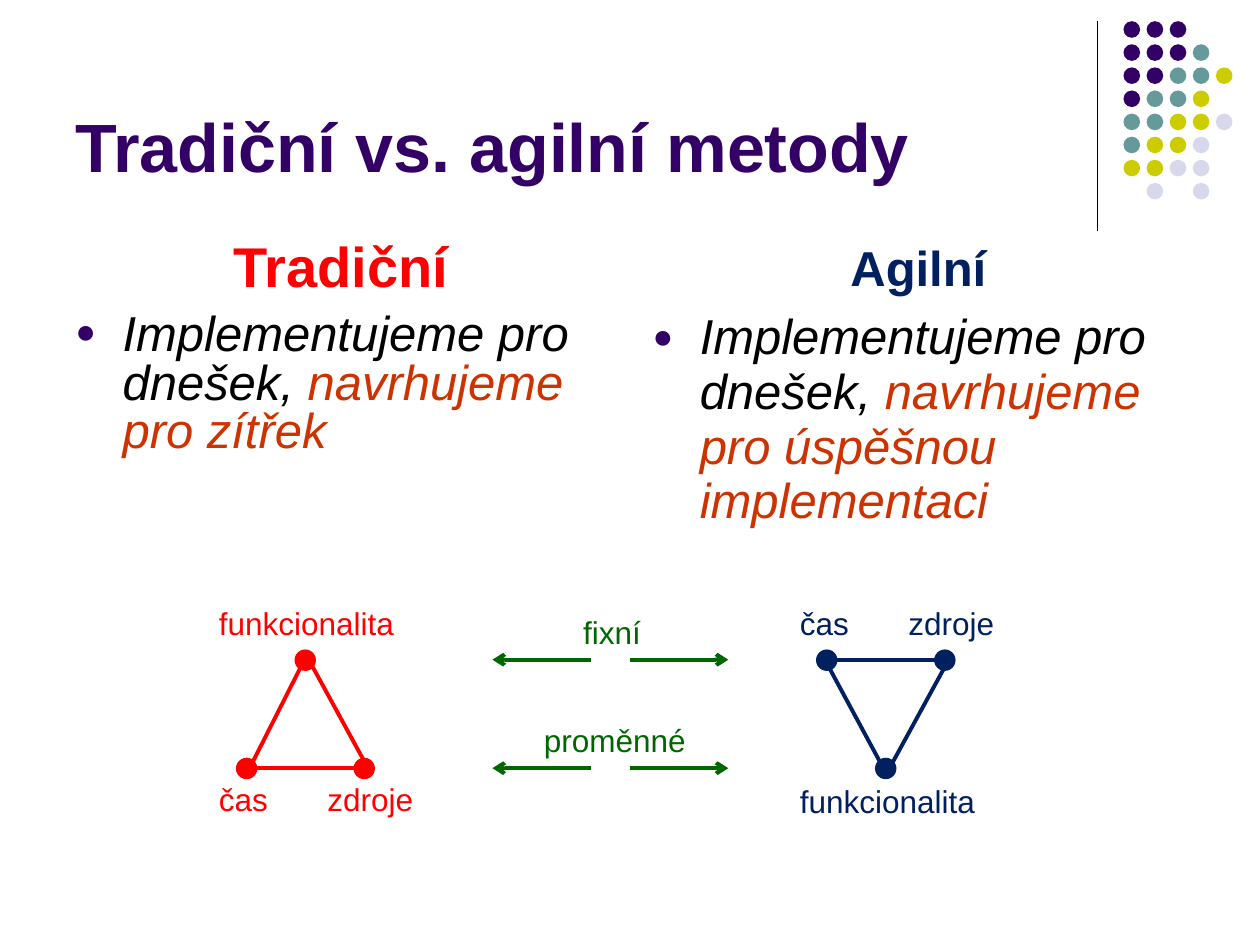
from dataclasses import dataclass

from lxml.etree import SubElement
from pptx import Presentation
from pptx.dml.color import RGBColor
from pptx.enum.shapes import MSO_CONNECTOR, MSO_SHAPE
from pptx.enum.text import MSO_ANCHOR, MSO_AUTO_SIZE, PP_ALIGN
from pptx.oxml.ns import qn
from pptx.util import Pt

FONT = "Arial"
PURPLE, TEAL, OLIVE, LILAC = "330066", "669999", "CCCC00", "D8D8EC"
RED, NAVY, GREEN, BLACK, RUST = "FF0000", "002060", "006600", "000000", "CC3300"


@dataclass
class Label:
    text: str
    x: float
    y: float
    w: float


@dataclass
class Triangle:
    color: str
    dots: list[tuple[float, float]]
    edges: list[tuple[float, float, float, float]]
    labels: list[Label]


@dataclass
class Column:
    x: float
    heading: str
    size: float
    color: str
    ending: str
    spacing: float


def rgb(value: str) -> RGBColor:
    return RGBColor.from_string(value)


def style(r, size: float, color: str, bold: bool = False, italic: bool = False) -> None:
    r.font.name = FONT
    r.font.size = Pt(size)
    r.font.bold = bold
    r.font.italic = italic
    r.font.color.rgb = rgb(color)


def add_dot(shapes, x: float, y: float, d: float, color: str, outline: bool = False) -> None:
    sp = shapes.add_shape(MSO_SHAPE.OVAL, Pt(x), Pt(y), Pt(d), Pt(d))
    sp.shadow.inherit = False
    sp.fill.solid()
    sp.fill.fore_color.rgb = rgb(color)
    if outline:
        sp.line.color.rgb = rgb(color)
        sp.line.width = Pt(0.75)
    else:
        sp.line.fill.background()


def add_line(shapes, x1: float, y1: float, x2: float, y2: float, color: str,
             width: float = 2.25, arrow: bool = False) -> None:
    ln = shapes.add_connector(MSO_CONNECTOR.STRAIGHT, Pt(x1), Pt(y1), Pt(x2), Pt(y2))
    ln.line.color.rgb = rgb(color)
    ln.line.width = Pt(width)
    if arrow:
        SubElement(ln.line._get_or_add_ln(), qn("a:tailEnd"), type="arrow")
    SubElement(ln._element.spPr, qn("a:effectLst"))


def add_label(shapes, label: Label, color: str) -> None:
    sp = shapes.add_textbox(Pt(label.x), Pt(label.y), Pt(label.w), Pt(27.4))
    tf = sp.text_frame
    tf.word_wrap = False
    tf.auto_size = MSO_AUTO_SIZE.SHAPE_TO_FIT_TEXT
    tf.text = label.text
    p = tf.paragraphs[0]
    p.line_spacing = 0.93
    style(p.runs[0], 18, color)


def add_bullet(p) -> None:
    pPr = p._p.get_or_add_pPr()
    color = SubElement(pPr, qn("a:buClr"))
    SubElement(color, qn("a:srgbClr"), val=PURPLE)
    SubElement(pPr, qn("a:buSzPct"), val="70000")
    SubElement(pPr, qn("a:buFont"), typeface=FONT)
    SubElement(pPr, qn("a:buChar"), char="●")


def add_column(shapes, col: Column) -> None:
    tf = shapes.add_textbox(Pt(col.x), Pt(135.4), Pt(318), Pt(347)).text_frame
    tf.word_wrap = True
    tf.text = col.heading
    head, item = tf.paragraphs[0], tf.add_paragraph()
    head.alignment = PP_ALIGN.CENTER
    style(head.runs[0], col.size, col.color, bold=True)
    for text, color in (("Implementujeme pro dnešek, ", BLACK), (col.ending, RUST)):
        r = item.add_run()
        r.text = text
        style(r, 28, color, italic=True)
    for p in (head, item):
        p.line_spacing = col.spacing
        p.space_before = Pt(7.5)
        pPr = p._p.get_or_add_pPr()
        pPr.set("marL", str(Pt(27)))
        pPr.set("indent", str(-Pt(27)))
    add_bullet(item)


def add_triangle(shapes, tri: Triangle) -> None:
    group = shapes.add_group_shape().shapes
    for edge in tri.edges:
        add_line(group, *edge, tri.color)
    for x, y in tri.dots:
        add_dot(group, x, y, 11.5, tri.color, outline=True)
    for label in tri.labels:
        add_label(group, label, tri.color)


# One letter per dot: colour key of the corner ornament
DOT_COLORS = {"P": PURPLE, "T": TEAL, "O": OLIVE, "L": LILAC}
DOT_ROWS = ["PPP", "PPPT", "PPTTO", "PTTO", "TTOOL", "TOOL", "OOLL", " L L"]

COLUMNS = [
    Column(36, "Tradiční", 32, RED, "navrhujeme pro zítřek", 0.83),
    Column(365.8, "Agilní", 28, NAVY, "navrhujeme pro úspěšnou implementaci", 0.93),
]

TOP, BOTTOM = 371.5, 433.4
TRIANGLES = [
    Triangle(
        RED,
        [(135.2, BOTTOM), (168.7, TOP), (202.4, BOTTOM)],
        [(144.7, 434.9, 174.2, 376.6), (212.4, 442.8, 178.6, 380.9),
         (146.2, 439, 213.8, 439)],
        [Label("funkcionalita", 118, 343.4, 115.2), Label("čas", 118, 444.3, 42.5),
         Label("zdroje", 180, 444.3, 64)],
    ),
    Triangle(
        NAVY,
        [(466.7, TOP), (500.4, BOTTOM), (534.2, TOP)],
        [(540, 380.9, 506.2, 442.8), (472.3, 378.7, 507.6, 444.2),
         (478, 377, 534.2, 377)],
        [Label("funkcionalita", 450, 445, 115.2), Label("čas", 450, 343.4, 42.5),
         Label("zdroje", 512, 343.4, 64)],
    ),
]


def main() -> None:
    prs = Presentation()
    prs.slide_width, prs.slide_height = Pt(720), Pt(540)
    s = prs.slides.add_slide(prs.slide_layouts[6])

    # Corner ornament
    add_line(s.shapes, 627.1, 12.2, 627.1, 131.8, BLACK, 0.75)
    ornament = s.shapes.add_group_shape().shapes
    for row, keys in enumerate(DOT_ROWS):
        for col, key in enumerate(keys):
            if key in DOT_COLORS:
                add_dot(ornament, 642 + 13.2 * col, 12.1 + 13.2 * row, 9.5, DOT_COLORS[key])

    # Title
    tf = s.shapes.add_textbox(Pt(36), Pt(9.4), Pt(630), Pt(101.5)).text_frame
    tf.word_wrap = True
    tf.vertical_anchor = MSO_ANCHOR.BOTTOM
    tf.text = "Tradiční vs. agilní metody"
    tf.paragraphs[0].line_spacing = 0.93
    style(tf.paragraphs[0].runs[0], 39, PURPLE, bold=True)

    # Text columns
    for column in COLUMNS:
        add_column(s.shapes, column)

    # Triangles of fixed and variable quantities
    for triangle in TRIANGLES:
        add_triangle(s.shapes, triangle)

    # Arrows between the triangles
    middle = s.shapes.add_group_shape().shapes
    for y in (377, 439):
        add_line(middle, 337.6, y, 281.4, y, GREEN, arrow=True)
        add_line(middle, 360, y, 416.2, y, GREEN, arrow=True)
    for label in (Label("fixní", 326.2, 348.5, 47.5), Label("proměnné", 303.8, 410.4, 96.5)):
        add_label(middle, label, GREEN)

    prs.save("out.pptx")


if __name__ == "__main__":
    main()
